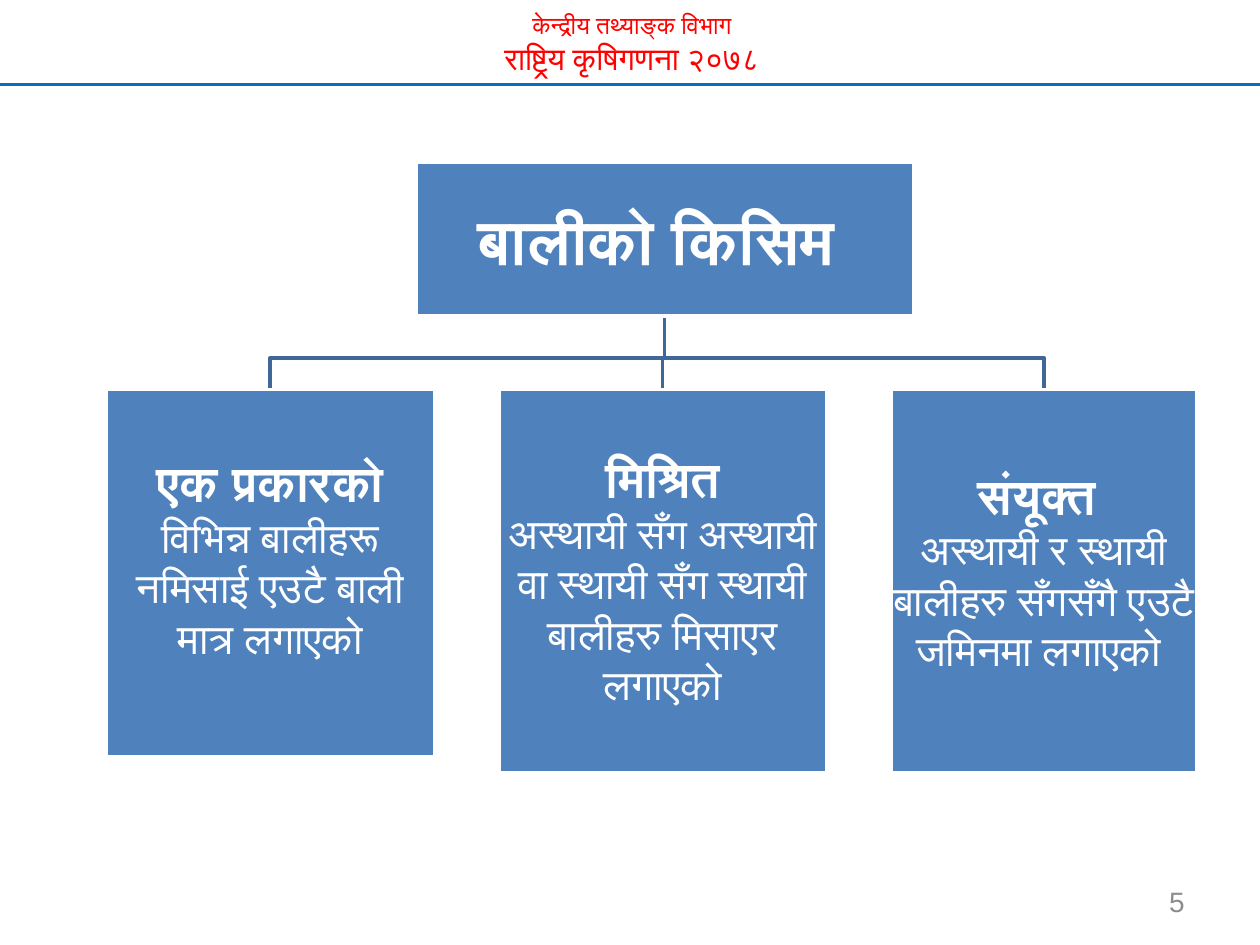
"""Build the crop-type hierarchy slide of the national agriculture census."""
from lxml.etree import SubElement
from pptx import Presentation
from pptx.dml.color import RGBColor
from pptx.enum.shapes import MSO_CONNECTOR, MSO_SHAPE
from pptx.enum.text import MSO_ANCHOR, PP_ALIGN
from pptx.oxml.ns import qn
from pptx.util import Inches, Pt

RED = RGBColor(0xFF, 0x00, 0x00)
RULE = RGBColor(0x00, 0x70, 0xC0)
BLUE = RGBColor(0x4F, 0x81, 0xBD)
BRANCH = RGBColor(0x3F, 0x67, 0x97)
WHITE = RGBColor(0xFF, 0xFF, 0xFF)
GREY = RGBColor(0x8C, 0x8C, 0x8C)

HEADER = [("केन्द्रीय तथ्याङ्क विभाग", 14, False), ("राष्ट्रिय कृषिगणना २०७८", 18, False)]
ROOT = ("बालीको किसिम ", (3.3, 1.29, 3.95, 1.22))
KINDS = [
    ("एक प्रकारको", "विभिन्न बालीहरू नमिसाई एउटै बाली मात्र लगाएको",
     (0.84, 3.09, 2.61, 2.92), 0.25),
    ("मिश्रित", "अस्थायी सँग अस्थायी वा स्थायी सँग स्थायी बालीहरु मिसाएर लगाएको",
     (3.96, 3.09, 2.6, 3.04), 0.03),
    ("संयूक्त ", "अस्थायी र स्थायी बालीहरु सँगसँगै एउटै जमिनमा लगाएको ",
     (7.07, 3.09, 2.43, 3.04), 0.17),
]
BRANCH_Y = 2.84


def write(tf, lines, color, align=PP_ALIGN.CENTER, font="Calibri"):
    tf.word_wrap = True
    for i, (text, size, bold) in enumerate(lines):
        p = tf.paragraphs[0] if i == 0 else tf.add_paragraph()
        p.text = text
        p.alignment = align
        p.font.name, p.font.size, p.font.bold = font, Pt(size), bold
        p.font.color.rgb = color


def add_box(s, at, lines, lift=0):
    box = s.shapes.add_shape(MSO_SHAPE.RECTANGLE, *map(Inches, at))
    box.shadow.inherit = False
    box.fill.solid()
    box.fill.fore_color.rgb = BLUE
    box.line.color.rgb = WHITE
    box.line.width = Pt(2)
    tf = box.text_frame
    tf.margin_left = tf.margin_right = tf.margin_top = Inches(0.01)
    tf.margin_bottom = Inches(0.01 + lift)
    tf.vertical_anchor = MSO_ANCHOR.MIDDLE
    write(tf, lines, WHITE)


def add_branch(s, points):
    (x, y), *rest = [(Inches(a), Inches(b)) for a, b in points]
    builder = s.shapes.build_freeform(x, y)
    builder.add_line_segments(rest, close=False)
    branch = builder.convert_to_shape()
    branch.shadow.inherit = False
    branch.fill.background()
    branch.line.color.rgb = BRANCH
    branch.line.width = Pt(2)


def main():
    prs = Presentation()
    prs.slide_width, prs.slide_height = Inches(10), Inches(7.5)
    s = prs.slides.add_slide(prs.slide_layouts[5])

    title = s.shapes.title
    title.left, title.top, title.width, title.height = map(Inches, (0.7, 0.03, 8.63, 0.64))
    title.text_frame.vertical_anchor = MSO_ANCHOR.TOP
    write(title.text_frame, HEADER, RED)

    rule = s.shapes.add_connector(MSO_CONNECTOR.STRAIGHT, 0, Inches(0.67), Inches(10), Inches(0.67))
    rule.line.color.rgb = RULE
    rule.line.width = Pt(1.5)
    SubElement(rule._element.spPr, qn("a:effectLst"))

    name, (left, top, width, height) = ROOT
    root_x, root_bottom = left + width / 2, top + height
    for _, _, (x, y, w, _), _ in KINDS:
        mid = x + w / 2
        add_branch(s, [(root_x, root_bottom), (root_x, BRANCH_Y), (mid, BRANCH_Y), (mid, y)])

    add_box(s, ROOT[1], [(name, 36, True)])
    for kind, detail, at, lift in KINDS:
        add_box(s, at, [(kind, 28, True), (detail, 24, False)], lift)

    number = s.shapes.add_textbox(*map(Inches, (7.17, 6.95, 2.33, 0.4)))
    number.text_frame.vertical_anchor = MSO_ANCHOR.MIDDLE
    write(number.text_frame, [("5", 16, False)], GREY, PP_ALIGN.RIGHT, "Arial")

    prs.save("out.pptx")


if __name__ == "__main__":
    main()
